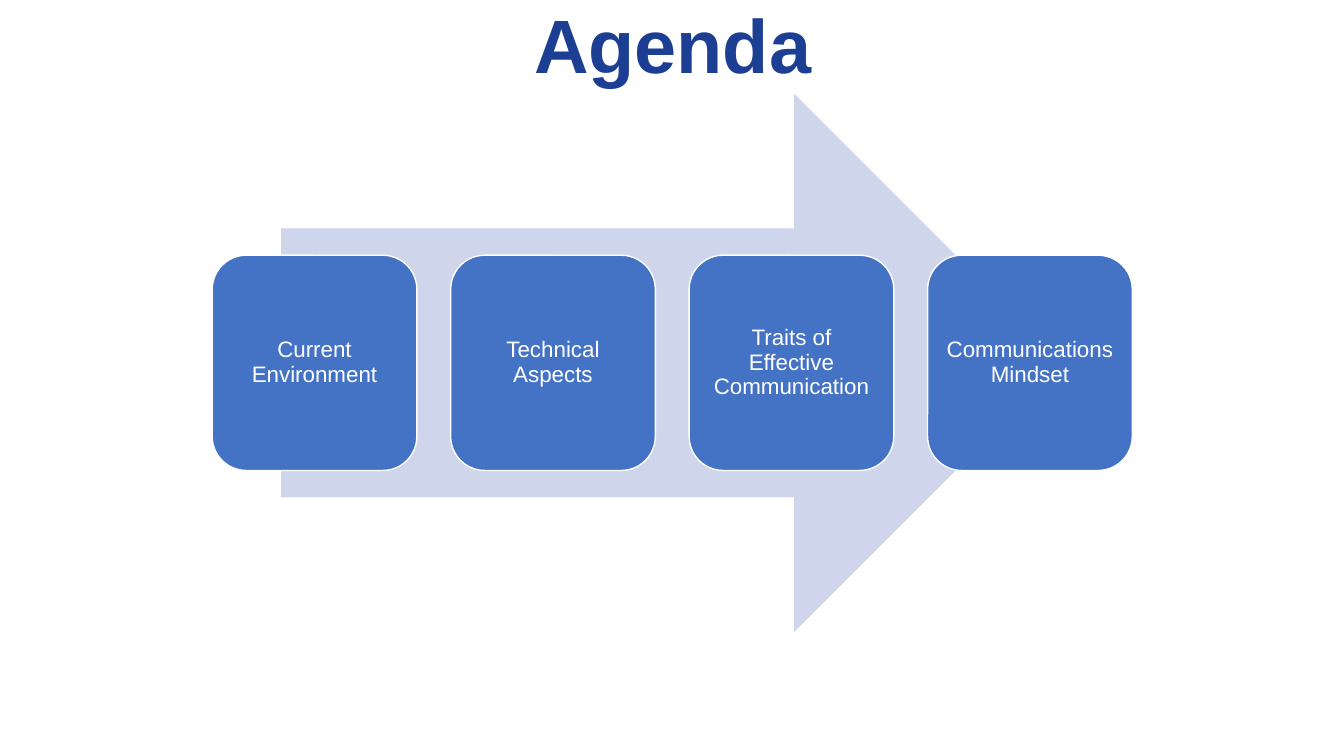
from dataclasses import dataclass

import pptx
import pptx.dml.color
import pptx.enum.shapes
import pptx.enum.text
import pptx.util

Pt = pptx.util.Pt
RGB = pptx.dml.color.RGBColor.from_string
SHAPE = pptx.enum.shapes.MSO_SHAPE
ANCHOR = pptx.enum.text.MSO_ANCHOR
CENTER = pptx.enum.text.PP_ALIGN.CENTER


@dataclass(frozen=True)
class Theme:
    font: str = "Arial"
    heading: str = "1C3F94"
    arrow: str = "CFD5EA"
    card: str = "4472C4"
    white: str = "FFFFFF"
    title_size: int = 54
    card_size: int = 16


THEME = Theme()
TOPICS = [
    "Current Environment",
    "Technical Aspects",
    "Traits of Effective Communication",
    "Communications Mindset",
]


def apply_format(target, values):
    for name, value in values.items():
        setattr(target, name, value)


def write_text(holder, text, frame_format, paragraph_format, size, color, bold=False):
    frame = holder.text_frame
    frame.text = text
    apply_format(frame, {"word_wrap": True, **frame_format})
    paragraph = frame.paragraphs[0]
    apply_format(paragraph, {"alignment": CENTER, **paragraph_format})
    apply_format(paragraph.font, {"name": THEME.font, "size": Pt(size), "bold": bold})
    paragraph.font.color.rgb = RGB(color)


def add_filled(slide, preset, box, fill):
    shape = slide.shapes.add_shape(preset, *map(Pt, box))
    shape.shadow.inherit = False
    shape.fill.solid()
    shape.fill.fore_color.rgb = RGB(fill)
    shape.line.fill.background()
    return shape


def add_title(slide, box):
    title = slide.shapes.title
    apply_format(title, dict(zip(("left", "top", "width", "height"), map(Pt, box))))
    frame_format = {"vertical_anchor": ANCHOR.BOTTOM,
                    "auto_size": pptx.enum.text.MSO_AUTO_SIZE.NONE}
    write_text(title, "Agenda", frame_format, {}, THEME.title_size, THEME.heading, True)


def add_topic_card(slide, topic, box):
    card = add_filled(slide, SHAPE.ROUNDED_RECTANGLE, box, THEME.card)
    card.line.color.rgb = RGB(THEME.white)
    card.line.width = Pt(1)
    sides = ("margin_left", "margin_top", "margin_right", "margin_bottom")
    frame_format = {"vertical_anchor": ANCHOR.MIDDLE, **dict.fromkeys(sides, Pt(5))}
    write_text(card, topic, frame_format, {"line_spacing": 0.9},
               THEME.card_size, THEME.white)


def add_process(slide, box):
    """Place an arrow with equally spaced topic cards across its middle."""
    left, top, width, height = box
    arrow_width = width * 0.85
    add_filled(slide, SHAPE.RIGHT_ARROW,
               (left + (width - arrow_width) / 2, top, arrow_width, height), THEME.arrow)

    card_width, card_height = 146.2, height * 0.4
    step = (width - card_width) / (len(TOPICS) - 1)
    card_top = top + (height - card_height) / 2
    for index, topic in enumerate(TOPICS):
        add_topic_card(slide, topic,
                       (left + index * step, card_top, card_width, card_height))


def main():
    deck = pptx.Presentation()
    deck.slide_width, deck.slide_height = Pt(960), Pt(540)
    slide = deck.slides.add_slide(deck.slide_layouts[5])
    add_process(slide, (151.6, 67, 657.2, 384.4))
    add_title(slide, (1.4, -0.7, 958.3, 67.7))
    deck.save("out.pptx")


if __name__ == "__main__":
    main()
